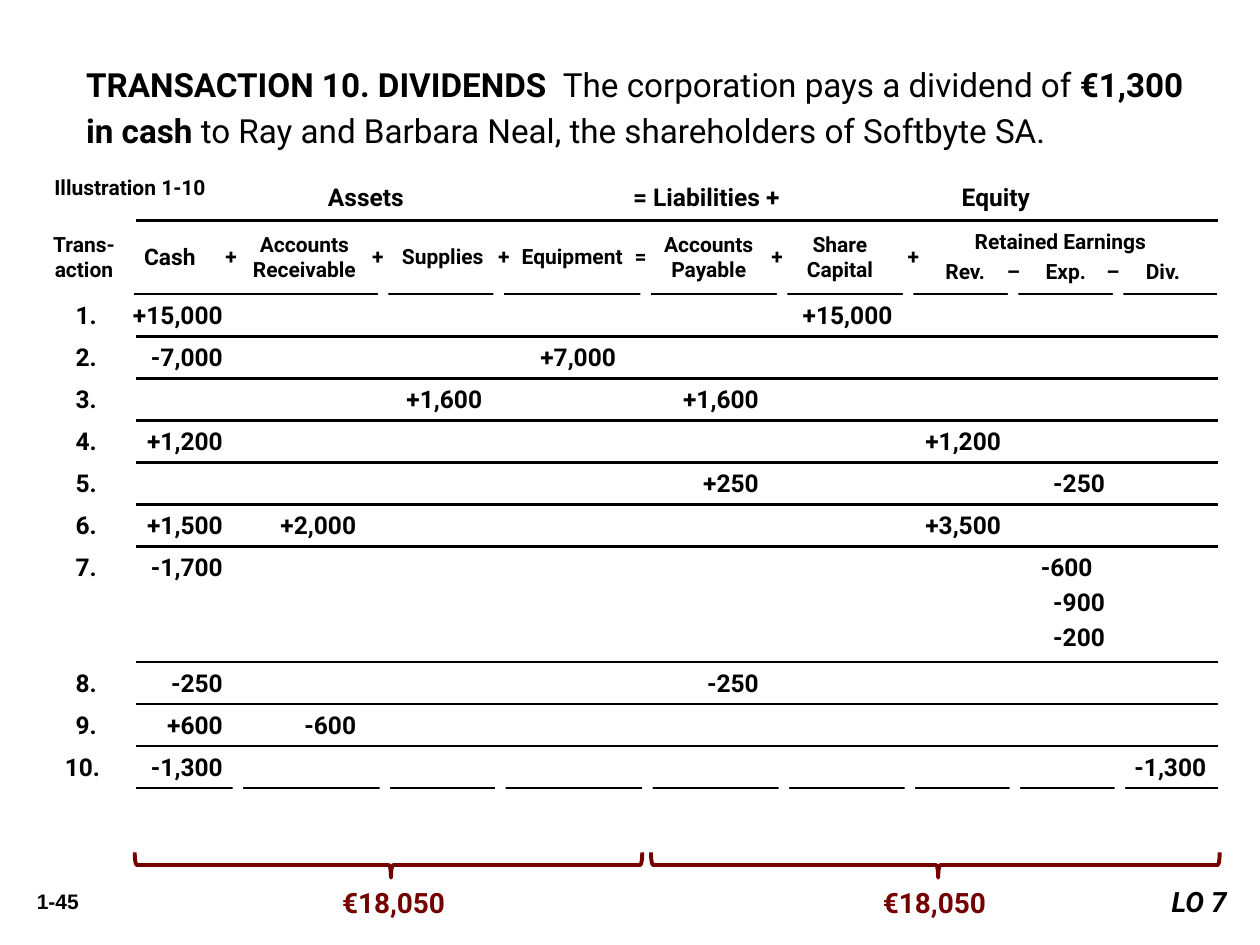
from dataclasses import dataclass

from lxml import etree
from pptx import Presentation
from pptx.dml.color import RGBColor
from pptx.enum import shapes, text
from pptx.oxml import ns
from pptx.util import Pt

BLACK = RGBColor(0x00, 0x00, 0x00)
WHITE = RGBColor(0xFF, 0xFF, 0xFF)
MAROON = RGBColor(0x74, 0x00, 0x00)
LEFT, CENTER, RIGHT = text.PP_ALIGN.LEFT, text.PP_ALIGN.CENTER, text.PP_ALIGN.RIGHT
TOP, MIDDLE = text.MSO_ANCHOR.TOP, text.MSO_ANCHOR.MIDDLE

RULE_LEFT, RULE_WIDTH = 77.7, 618.6
HEADER_TOP, HEADER_HEIGHT = 126, 41
BODY_TOP, ROW_HEIGHT = 168, 24
RULE_DROP = 0.3
COLUMN_GAPS = [216, 282, 366, 444, 516, 576, 636]
GAP_WIDTH, GAP_HEIGHT = 6, 12

# Right-aligned tab stops, measured from the inner edge of a row
NUMBER, CASH, RECEIVABLE, SUPPLIES, EQUIPMENT = 18.3, 90.3, 166.5, 238.5, 315
PAYABLE, CAPITAL, REVENUE, EXPENSE, DIVIDEND = 396.6, 473, 535, 594.4, 652.3
EXPENSE_INSET = 587.3
# Brace corner radius and point position, in percent
BRACE_CURVE, BRACE_POINT = 8.33, 50.5


@dataclass
class Box:
    left: float
    top: float
    width: float
    height: float


@dataclass
class Style:
    size: float = 12
    color: RGBColor = BLACK
    font: str = "Roboto"
    bold: bool = True
    italic: bool = False


@dataclass
class Line:
    text: str
    tabs: tuple[float, ...] = ()
    tab_align: str = "ctr"


@dataclass
class Heading:
    left: float
    width: float
    lines: list[Line]
    size: float = 12
    margin: float = 7.2
    space: float = 0


@dataclass
class Row:
    lines: list[dict[float, str]]
    height: float = ROW_HEIGHT


HEADINGS = [
    Heading(18, 60, [Line("Trans-"), Line("action")]),
    Heading(67, 60, [Line("Cash")], size=13),
    Heading(138, 72, [Line("Accounts"), Line("Receivable")], margin=0),
    Heading(223, 60, [Line("Supplies")], margin=0),
    Heading(288, 78, [Line("Equipment")], margin=0),
    Heading(366, 78, [Line("Accounts"), Line("Payable")]),
    Heading(444, 72, [Line("Share Capital")]),
    Heading(516, 180, [Line("Retained Earnings"),
                       Line("\tRev.\t–\tExp.\t–\tDiv.", (28.5, 56, 86, 113, 141.5))], space=3),
]
OPERATORS = [(126, "+"), (210, "+"), (282, "+"), (360, "="), (438, "+"), (516, "+")]

ROWS = [
    Row([{NUMBER: "1.", CASH: "+15,000", CAPITAL: "+15,000"}]),
    Row([{NUMBER: "2.", CASH: "-7,000", EQUIPMENT: "+7,000"}]),
    Row([{NUMBER: "3.", SUPPLIES: "+1,600", PAYABLE: "+1,600"}]),
    Row([{NUMBER: "4.", CASH: "+1,200", REVENUE: "+1,200"}]),
    Row([{NUMBER: "5.", PAYABLE: "+250", EXPENSE: "-250"}]),
    Row([{NUMBER: "6.", CASH: "+1,500", RECEIVABLE: "+2,000", REVENUE: "+3,500"}]),
    Row([{NUMBER: "7.", CASH: "-1,700", EXPENSE_INSET: "-600"},
         {EXPENSE: "-900"}, {EXPENSE: "-200"}], height=66),
    Row([{NUMBER: "8.", CASH: "-250", PAYABLE: "-250"}]),
    Row([{NUMBER: "9.", CASH: "+600", RECEIVABLE: "-600"}]),
    Row([{NUMBER: "10.", CASH: "-1,300", DIVIDEND: "-1,300"}]),
]


def add_run(p, content: str, style: Style) -> None:
    r = p.add_run()
    r.text = content
    f = r.font
    f.name, f.size, f.bold, f.italic = style.font, Pt(style.size), style.bold, style.italic
    f.color.rgb = style.color


def set_tabs(p, tabs: tuple[float, ...], align: str) -> None:
    tab_list = etree.SubElement(p._p.get_or_add_pPr(), ns.qn("a:tabLst"))
    for position in tabs:
        etree.SubElement(tab_list, ns.qn("a:tab"), pos=str(int(Pt(position))), algn=align)


def add_text(slide, box: Box, lines: list[Line], style: Style, align=LEFT,
             anchor=TOP, margin: float = 7.2, space: float = 0) -> None:
    sp = slide.shapes.add_textbox(Pt(box.left), Pt(box.top), Pt(box.width), Pt(box.height))
    tf = sp.text_frame
    tf.word_wrap = True
    tf.vertical_anchor = anchor
    tf.margin_left = tf.margin_right = Pt(margin)
    for i, line in enumerate(lines):
        p = tf.add_paragraph() if i else tf.paragraphs[0]
        p.alignment = LEFT if line.tabs else align
        if i and space:
            p.space_before = Pt(space)
        if line.tabs:
            set_tabs(p, line.tabs, line.tab_align)
        add_run(p, line.text, style)


def add_rule(slide, y: float, left: float = RULE_LEFT) -> None:
    line = slide.shapes.add_connector(shapes.MSO_CONNECTOR.STRAIGHT,
                                      Pt(left), Pt(y), Pt(left + RULE_WIDTH), Pt(y))
    line.line.color.rgb = BLACK
    line.line.width = Pt(1.5)
    etree.SubElement(line._element.spPr, ns.qn("a:effectLst"))


def add_gaps(slide, y: float, lefts: list[float]) -> None:
    """Break the rule at height y between the columns."""
    for left in lefts:
        sp = slide.shapes.add_shape(shapes.MSO_SHAPE.RECTANGLE, Pt(left), Pt(y - GAP_HEIGHT / 2),
                                    Pt(GAP_WIDTH), Pt(GAP_HEIGHT))
        sp.shadow.inherit = False
        sp.fill.solid()
        sp.fill.fore_color.rgb = WHITE
        sp.line.fill.background()


def add_row(slide, row: Row, top: float) -> None:
    lines = [Line("".join("\t" + value for value in cells.values()), tuple(cells), "r")
             for cells in row.lines]
    add_text(slide, Box(30, top, 678, row.height), lines, Style(14), space=3)


def add_brace(slide, left: float, right: float) -> None:
    """Draw a brace below the columns, its point downwards."""
    depth, length, middle = 14.4, right - left, 494.3
    sp = slide.shapes.add_shape(
        shapes.MSO_SHAPE.LEFT_BRACE, Pt((left + right - depth) / 2), Pt(middle - length / 2),
        Pt(depth), Pt(length))
    sp.rotation = 270
    sp.adjustments[0], sp.adjustments[1] = BRACE_CURVE / 100, BRACE_POINT / 100
    sp.shadow.inherit = False
    sp.fill.background()
    sp.line.color.rgb = MAROON
    sp.line.width = Pt(2.25)


def add_title(slide) -> None:
    title = slide.shapes.title
    title.left, title.top, title.width, title.height = Pt(42), Pt(30), Pt(653), Pt(60.5)
    tf = title.text_frame
    tf.auto_size = text.MSO_AUTO_SIZE.NONE
    tf.word_wrap = True
    tf.vertical_anchor = TOP
    p = tf.paragraphs[0]
    p.alignment = LEFT
    p.line_spacing = 1.15
    for content, bold in [
        ("TRANSACTION 10. DIVIDENDS  ", True),
        ("The corporation pays a dividend of ", False),
        ("€1,300 in cash ", True),
        ("to Ray and Barbara Neal, the shareholders of Softbyte SA.", False),
    ]:
        add_run(p, content, Style(19, bold=bold))


def main() -> None:
    prs = Presentation()
    prs.slide_width, prs.slide_height = Pt(720), Pt(540)
    slide = prs.slides.add_slide(prs.slide_layouts[5])
    slide.background.fill.solid()
    slide.background.fill.fore_color.rgb = WHITE
    add_title(slide)

    add_text(slide, Box(24, 96, 117, 21), [Line("Illustration 1-10")], Style())
    add_text(slide, Box(72, 102, 624, 21),
             [Line("\tAssets\t= Liabilities +\tEquity", (130, 324.6, 490))],
             Style(14), anchor=MIDDLE)
    add_rule(slide, HEADER_TOP)
    for h in HEADINGS:
        add_text(slide, Box(h.left, HEADER_TOP, h.width, HEADER_HEIGHT), h.lines,
                 Style(h.size), CENTER, MIDDLE, h.margin, h.space)
    for left, sign in OPERATORS:
        add_text(slide, Box(left, HEADER_TOP, 12, HEADER_HEIGHT), [Line(sign)],
                 Style(), CENTER, MIDDLE, margin=0)

    add_rule(slide, BODY_TOP, RULE_LEFT - 1)
    add_gaps(slide, BODY_TOP, COLUMN_GAPS)
    top = BODY_TOP
    for row in ROWS:
        add_row(slide, row, top)
        top += row.height
        add_rule(slide, top + RULE_DROP)
    add_gaps(slide, top, [133] + [left + 1 for left in COLUMN_GAPS])

    for left, right, total_left in [(77, 367, 174), (372, 697, 483)]:
        add_brace(slide, left, right)
        add_text(slide, Box(total_left, 502.5, 102, 26.5), [Line("€18,050")],
                 Style(16, MAROON), CENTER)
    add_text(slide, Box(6, 504, 54, 21.5), [Line("1-45")], Style(font="Arial"), CENTER)
    add_text(slide, Box(648, 502, 60, 26.5), [Line("LO 7")], Style(16, italic=True), RIGHT)
    prs.save("out.pptx")


if __name__ == "__main__":
    main()
